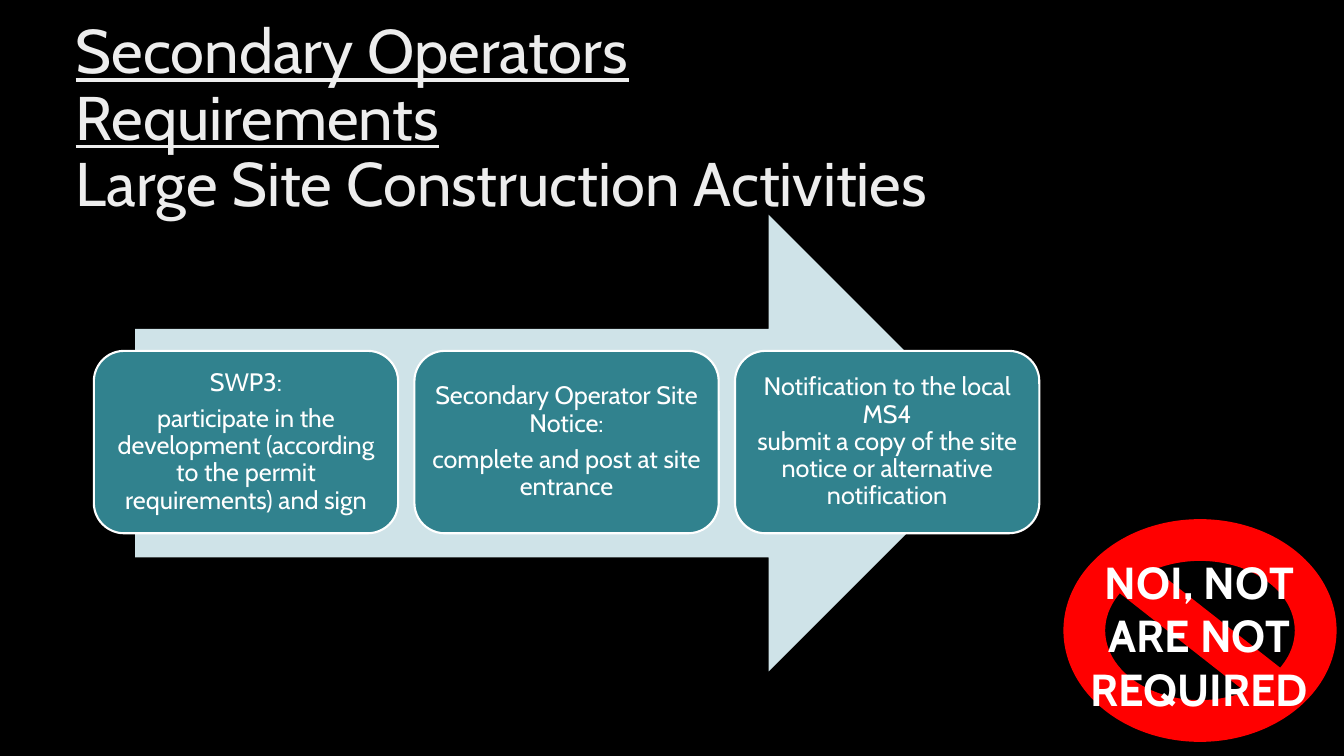
from pptx import Presentation
from pptx.dml.color import RGBColor
from pptx.enum.shapes import MSO_SHAPE
from pptx.enum.text import MSO_ANCHOR, MSO_AUTO_SIZE, PP_ALIGN
from pptx.util import Pt


def color(value):
    return RGBColor.from_string(value)


class Page:
    font = "Cabin"
    white = "FFFFFF"
    title_color = "EDEDED"
    teal = "31828E"
    pale = "CFE3E8"
    red = "FF0000"

    def __init__(self, deck):
        self.slide = deck.slides.add_slide(deck.slide_layouts[5])
        fill = self.slide.background.fill
        fill.solid()
        fill.fore_color.rgb = color("000000")

    def span(self, para, text, size, ink, bold=False, underline=False):
        span = para.add_run()
        span.text = text
        span.font.name = self.font
        span.font.size = Pt(size)
        span.font.color.rgb = color(ink)
        span.font.bold = bold
        span.font.underline = underline

    def title(self, underlined, plain, left, top, width, height):
        box = self.slide.shapes.title
        box.left, box.top, box.width, box.height = map(Pt, (left, top, width, height))
        frame = box.text_frame
        frame.auto_size = MSO_AUTO_SIZE.NONE
        frame.word_wrap = True
        frame.vertical_anchor = MSO_ANCHOR.MIDDLE
        para = frame.paragraphs[0]
        para.alignment = PP_ALIGN.LEFT
        para.line_spacing = 0.9
        self.span(para, underlined, 44, self.title_color, underline=True)
        para.add_line_break()
        self.span(para, plain, 44, self.title_color)

    def shape(self, kind, fill, left, top, width, height):
        shape = self.slide.shapes.add_shape(kind, *map(Pt, (left, top, width, height)))
        shape.shadow.inherit = False
        shape.fill.solid()
        shape.fill.fore_color.rgb = color(fill)
        shape.line.fill.background()
        return shape

    def card(self, paragraphs, left, top, width, height):
        box = self.shape(MSO_SHAPE.ROUNDED_RECTANGLE, self.teal, left, top, width, height)
        box.line.color.rgb = color(self.white)
        box.line.width = Pt(1.5)
        frame = box.text_frame
        frame.word_wrap = True
        frame.vertical_anchor = MSO_ANCHOR.MIDDLE
        frame.margin_left = frame.margin_right = Pt(5)
        frame.margin_top = frame.margin_bottom = Pt(5)
        for index, lines in enumerate(paragraphs):
            para = frame.add_paragraph() if index else frame.paragraphs[0]
            para.alignment = PP_ALIGN.CENTER
            para.line_spacing = 0.9
            para.space_after = Pt(6.3)
            for number, line in enumerate(lines):
                if number:
                    para.add_line_break()
                self.span(para, line, 18, self.white)

    def label(self, text, left, top, width, height):
        box = self.slide.shapes.add_textbox(*map(Pt, (left, top, width, height)))
        box.text_frame.word_wrap = True
        para = box.text_frame.paragraphs[0]
        para.alignment = PP_ALIGN.CENTER
        self.span(para, text, 32, self.white, bold=True)


CARDS = [
    [["SWP3:"],
     ["participate in the development (according to the permit requirements) and sign"]],
    [["Secondary Operator Site Notice:"], ["complete and post at site entrance"]],
    [["Notification to the local MS4",
      "submit a copy of the site notice or alternative notification"]],
]


def main():
    deck = Presentation()
    deck.slide_width, deck.slide_height = Pt(960), Pt(540)
    page = Page(deck)
    page.title("Secondary Operators Requirements", "Large Site Construction Activities",
               46.8, 26.6, 671.8, 118.8)
    page.shape(MSO_SHAPE.RIGHT_ARROW, page.pale, 96.5, 153.4, 615.6, 326.2)
    for column, paragraphs in enumerate(CARDS):
        page.card(paragraphs, 67 + 229 * column, 250.6, 217.4, 130.3)
    page.shape(MSO_SHAPE.NO_SYMBOL, page.red, 759.6, 370.8, 195.1, 159.1)
    page.label("NOI, NOT ARE NOT REQUIRED", 766.8, 392.4, 180, 123.8)
    deck.save("out.pptx")


if __name__ == "__main__":
    main()
